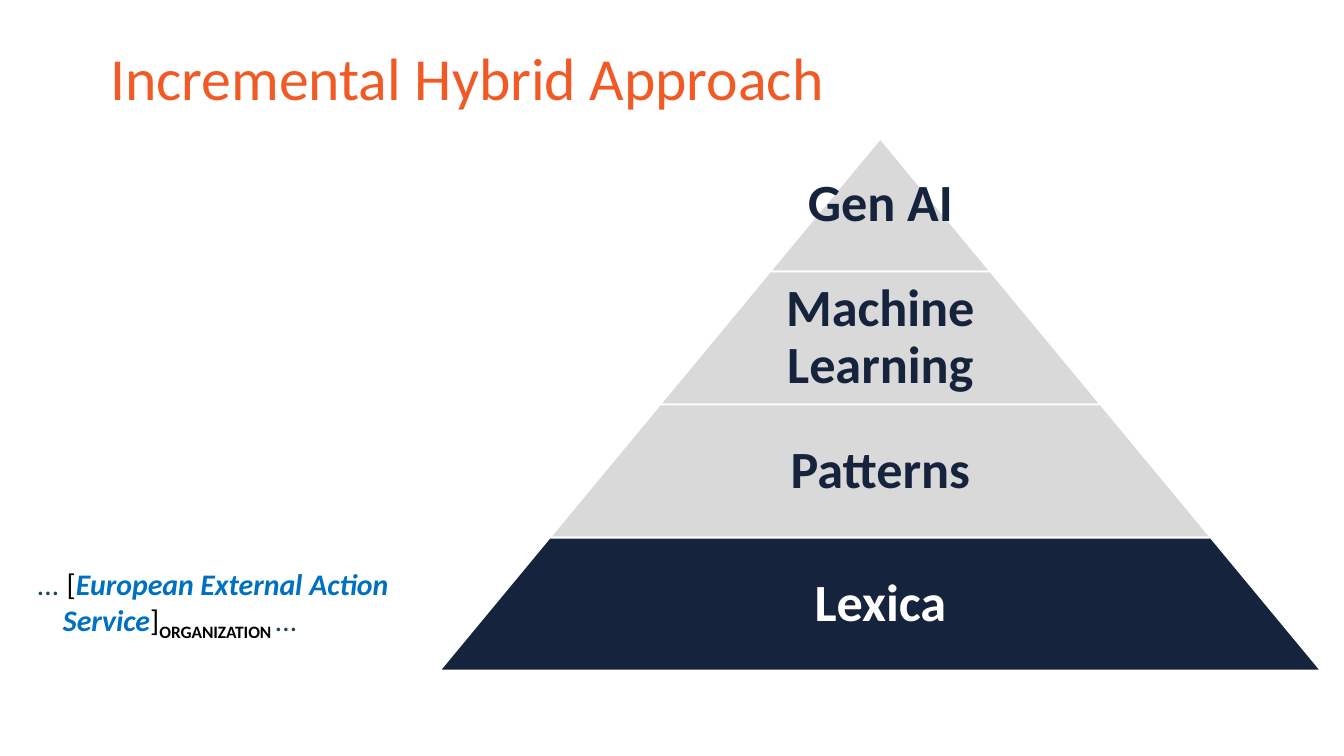
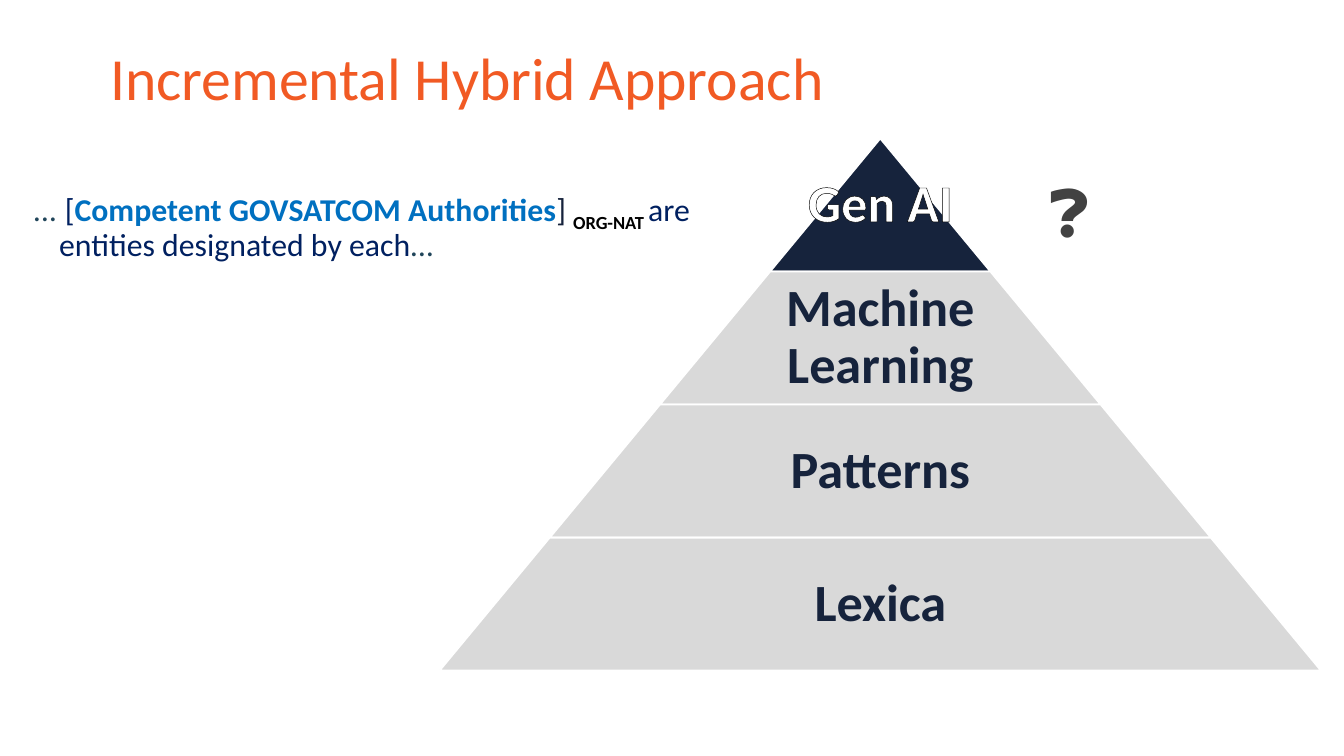
from lxml import etree
from pptx import Presentation
from pptx.dml.color import RGBColor
from pptx.enum.shapes import MSO_SHAPE
from pptx.enum.text import MSO_ANCHOR, PP_ALIGN
from pptx.oxml.ns import qn
from pptx.util import Inches, Pt

TRAPEZOID = MSO_SHAPE.TRAPEZOID
TOP, MIDDLE = MSO_ANCHOR.TOP, MSO_ANCHOR.MIDDLE
LEFT, CENTER = PP_ALIGN.LEFT, PP_ALIGN.CENTER

WHITE = RGBColor(0xFF, 0xFF, 0xFF)
BLACK = RGBColor(0x00, 0x00, 0x00)
NAVY = RGBColor(0x16, 0x23, 0x3C)
GREY = RGBColor(0xD9, 0xD9, 0xD9)
ORANGE = RGBColor(0xF1, 0x5A, 0x24)
BLUE = RGBColor(0x00, 0x70, 0xC0)
DEEP_BLUE = RGBColor(0x00, 0x20, 0x60)
TEAL = RGBColor(0x20, 0x45, 0x5A)
DARK_GREY = RGBColor(0x42, 0x42, 0x42)

TITLE = "Incremental Hybrid Approach"
TIERS = ["Gen AI", "Machine Learning", "Patterns", "Lexica"]

# Pyramid geometry in inches
APEX_X, PYRAMID_TOP = 6.55, 1.03
TIER_HEIGHT, TIER_STEP = 0.99, 1.64
TIER_SLOPE = TIER_STEP / 2 / TIER_HEIGHT
LABEL_SHARE = 0.65
EXAMPLE_LEFT = 0.18


def add_run(paragraph, text, size=16, font="Calibri", color=BLACK, bold=False,
            italic=False, subscript=False, outline=None):
    run = paragraph.add_run()
    run.text = text
    run.font.size = Pt(size)
    run.font.name = font
    run.font.bold = bold
    run.font.italic = italic
    run.font.color.rgb = color
    properties = run._r.get_or_add_rPr()
    if subscript:
        properties.set("baseline", "-25000")
    if outline is not None:
        line = etree.Element(qn("a:ln"), w=str(Pt(0.8)))
        fill = etree.SubElement(line, qn("a:solidFill"))
        etree.SubElement(fill, qn("a:srgbClr"), val=str(outline))
        properties.insert(0, line)


class Deck:
    """Holds the shared style and the current slide."""

    def __init__(self):
        self.presentation = Presentation()
        self.presentation.slide_width = Inches(10)
        self.presentation.slide_height = Inches(10) * 9 // 16
        self.slide = None

    def new_slide(self):
        layout = self.presentation.slide_layouts[6]
        self.slide = self.presentation.slides.add_slide(layout)

    def text(self, left, top, width, height, runs, insets=(0.1, 0.05, 0.1, 0.05),
             align=LEFT, anchor=MIDDLE, spacing=0.9, indent=(0, 0)):
        """Add a text box; runs is a list of (text, format) pairs."""
        box = self.slide.shapes.add_textbox(
            Inches(left), Inches(top), Inches(width), Inches(height))
        frame = box.text_frame
        frame.word_wrap = True
        frame.vertical_anchor = anchor
        (frame.margin_left, frame.margin_top,
         frame.margin_right, frame.margin_bottom) = map(Inches, insets)
        paragraph = frame.paragraphs[0]
        paragraph.alignment = align
        paragraph.line_spacing = spacing
        margin, first_line = indent
        if margin:
            properties = paragraph._p.get_or_add_pPr()
            properties.set("marL", str(Inches(margin)))
            properties.set("indent", str(Inches(first_line)))
        for text, style in runs:
            add_run(paragraph, text, **style)

    def title(self):
        self.text(0.72, 0.06, 8.61, 1.09, [(TITLE, dict(size=32, color=ORANGE))])

    def pyramid(self, active, outline=None):
        """Stack the tiers, with the active one highlighted."""
        for index, name in enumerate(TIERS):
            width = TIER_STEP * (index + 1)
            top = PYRAMID_TOP + TIER_HEIGHT * index
            is_active = name == active
            shape = self.slide.shapes.add_shape(
                TRAPEZOID, Inches(APEX_X - width / 2), Inches(top),
                Inches(width), Inches(TIER_HEIGHT))
            shape.adjustments[0] = TIER_SLOPE
            shape.shadow.inherit = False
            shape.fill.solid()
            shape.fill.fore_color.rgb = NAVY if is_active else GREY
            shape.line.color.rgb = WHITE
            shape.line.width = Pt(1)

            label_width = width * LABEL_SHARE if index else width
            style = dict(size=28, bold=True, color=WHITE if is_active else NAVY,
                         outline=outline if is_active else None)
            self.text(APEX_X - label_width / 2, top, label_width, TIER_HEIGHT,
                      [(name, style)], insets=(0.04,) * 4, align=CENTER)

    def example(self, tier, width, insets, runs):
        """Add a hanging example sentence beside a tier."""
        top = PYRAMID_TOP + TIER_HEIGHT * TIERS.index(tier)
        self.text(EXAMPLE_LEFT, top, width, TIER_HEIGHT, runs,
                  insets=insets, indent=(0.19, -0.19))


def main():
    deck = Deck()

    # Slide 1: lexica
    deck.new_slide()
    deck.pyramid("Lexica")
    deck.example("Lexica", 3.09, (0.1,) * 4, [
        ("... ", dict(color=TEAL, italic=True)),
        ("[", {}),
        ("European External Action Service", dict(color=BLUE, bold=True, italic=True)),
        ("]", {}),
        ("ORGANIZATION ", dict(bold=True, subscript=True)),
        ("...", dict(color=TEAL, italic=True)),
    ])
    deck.title()

    # Slide 2: generative AI
    deck.new_slide()
    deck.pyramid("Gen AI", outline=BLACK)
    deck.example("Gen AI", 5.55, (0.07, 0.39, 0.07, 0.07), [
        ("...", dict(size=17, color=TEAL, italic=True)),
        (" [", dict(size=17, color=DEEP_BLUE)),
        ("Competent GOVSATCOM Authorities", dict(size=17, color=BLUE, bold=True)),
        ("] ", dict(size=17, color=NAVY)),
        ("ORG-NAT ", dict(size=17, bold=True, subscript=True)),
        ("are entities designated by each", dict(size=17, color=DEEP_BLUE)),
        ("...", dict(size=17, color=TEAL, italic=True)),
    ])
    deck.title()
    deck.text(7.2, 1.23, 0.34, 0.64,
              [("❓", dict(size=32, font="Roboto", color=DARK_GREY))],
              anchor=TOP, spacing=1.0, indent=(0.5, 0))

    deck.presentation.save("out.pptx")


if __name__ == "__main__":
    main()
